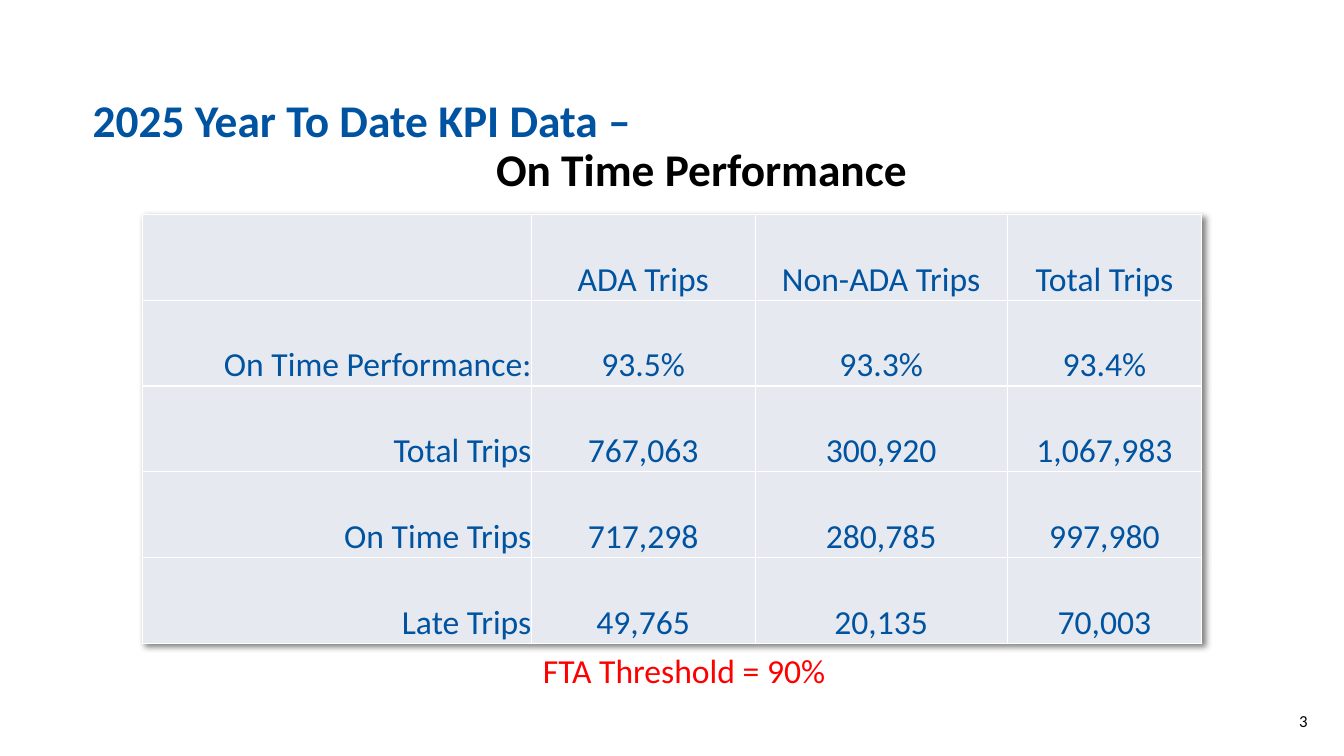
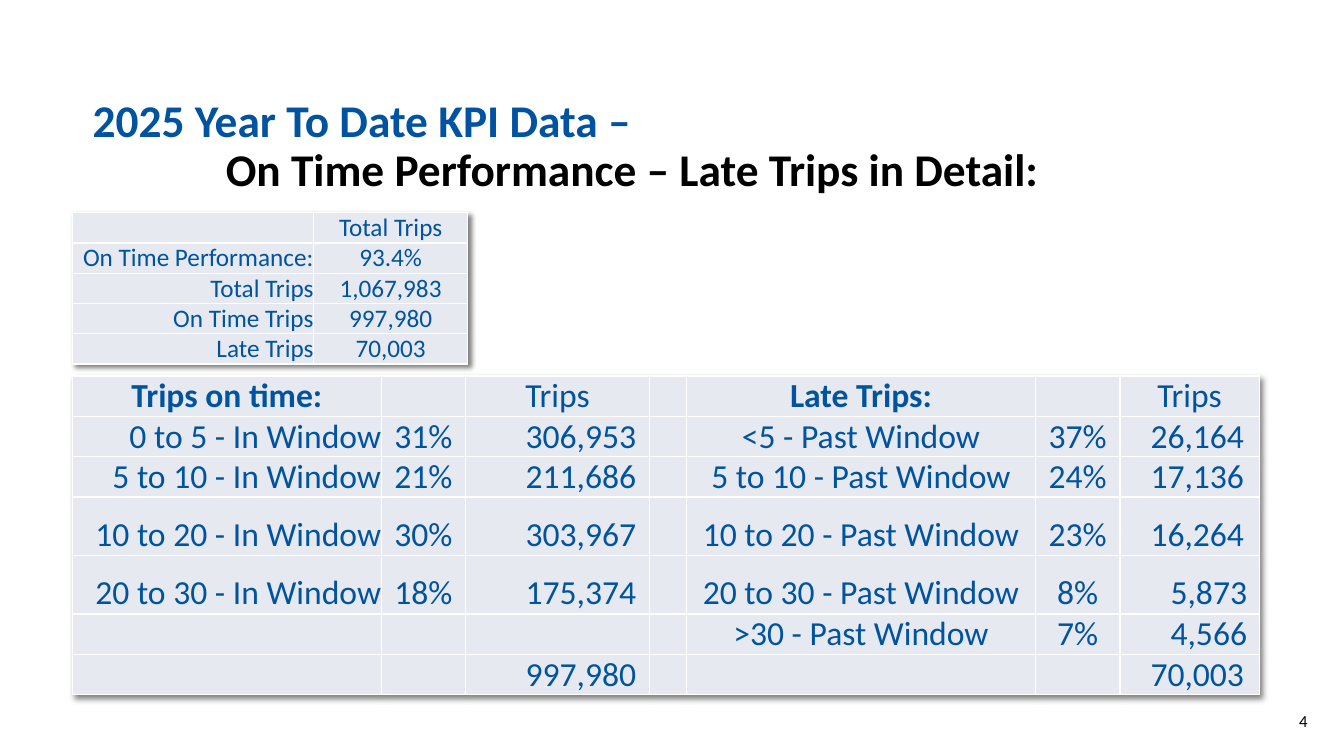
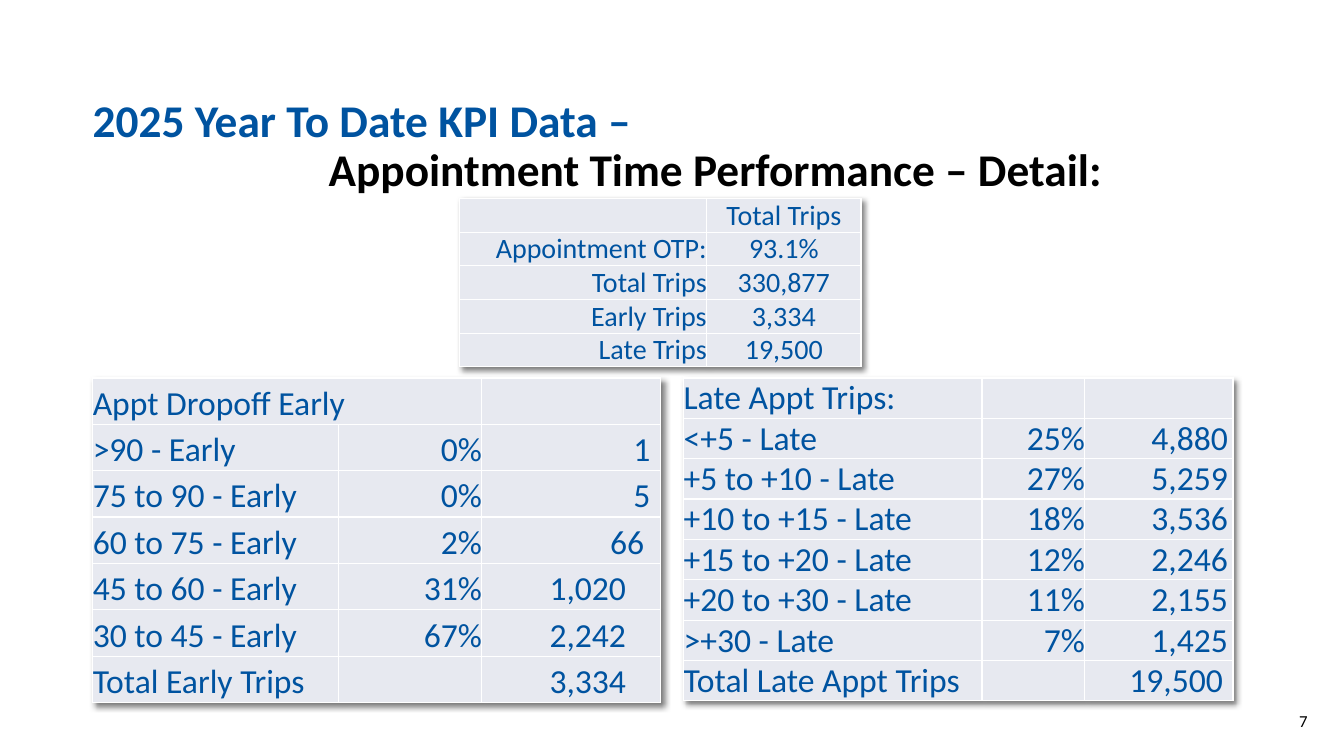
import pptx
import pptx.util
import pptx.dml.color
import pptx.enum.text
import pptx.oxml
import pptx.oxml.ns

Inches = pptx.util.Inches
Pt = pptx.util.Pt
RGBColor = pptx.dml.color.RGBColor
ANCHOR = pptx.enum.text.MSO_ANCHOR
ALIGN = dict(zip("lcr", (pptx.enum.text.PP_ALIGN.LEFT,
                         pptx.enum.text.PP_ALIGN.CENTER,
                         pptx.enum.text.PP_ALIGN.RIGHT)))

# Shared look
BLUE = RGBColor(0x00, 0x53, 0xA0)
BLACK = RGBColor(0x00, 0x00, 0x00)
RED = RGBColor(0xFF, 0x00, 0x00)
WHITE = RGBColor(0xFF, 0xFF, 0xFF)
PALE = RGBColor(0xE7, 0xE9, 0xF0)
FONT = "Calibri"
TITLE = "2025 Year To Date KPI Data –"
NS = pptx.oxml.ns.nsdecls("a")
EDGE = ('<a:{} ' + NS + ' w="12700"><a:solidFill><a:srgbClr val="' + str(WHITE)
        + '"/></a:solidFill></a:{}>')
SHADOW = ('<a:effectLst ' + NS + '><a:outerShdw blurRad="50800" dist="38100" '
          'dir="2700000" algn="tl" rotWithShape="0"><a:srgbClr val="000000">'
          '<a:alpha val="50000"/></a:srgbClr></a:outerShdw></a:effectLst>')

# Content: a cell is its text, or (text, right inset)
# "align" has one letter per column, "head" is the alignment of the top row
SLIDES = [
    dict(number="3", topic="On Time Performance", indent=4.0,
         note="FTA Threshold = 90%",
         tables=[
             dict(at=(1.41, 2.13), cols=[3.86, 2.22, 2.5, 1.93], rows=[0.85] * 5,
                  size=24, align="rccc", head="c", cells=[
                      ["", "ADA Trips", "Non-ADA Trips", "Total Trips"],
                      ["On Time Performance:", "93.5%", "93.3%", "93.4%"],
                      ["Total Trips", "767,063", "300,920", "1,067,983"],
                      ["On Time Trips", "717,298", "280,785", "997,980"],
                      ["Late Trips", "49,765", "20,135", "70,003"]])]),
    dict(number="4", topic="On Time Performance – Late Trips in Detail:", indent=1.32,
         tables=[
             dict(at=(0.72, 2.11), cols=[2.39, 1.53], rows=[0.3] * 5,
                  size=18, align="rc", head="c", cells=[
                      ["", "Total Trips"],
                      ["On Time Performance:", "93.4%"],
                      ["Total Trips", "1,067,983"],
                      ["On Time Trips", "997,980"],
                      ["Late Trips", "70,003"]]),
             dict(at=(0.72, 3.73), cols=[3.06, 0.84, 1.82, 0.37, 3.46, 0.84, 1.38],
                  rows=[0.4, 0.4, 0.4, 0.58, 0.58, 0.4, 0.4],
                  size=24, align="rcrcccr", head="c", bold=(0, 4),
                  inset={2: 0.13, 6: 0.15}, cells=[
                      ["Trips on time:", "", "Trips", "", "Late Trips:", "", "Trips"],
                      ["0 to 5 - In Window", "31%", "306,953", "",
                       "<5 - Past Window", "37%", "26,164"],
                      ["5 to 10 - In Window", "21%", "211,686", "",
                       "5 to 10 - Past Window", "24%", "17,136"],
                      ["10 to 20 - In Window", "30%", "303,967", "",
                       "10 to 20 - Past Window", "23%", "16,264"],
                      ["20 to 30 - In Window", "18%", "175,374", "",
                       "20 to 30 - Past Window", "8%", ("5,873", 0.12)],
                      ["", "", "", "", ">30 - Past Window", "7%", ("4,566", 0.12)],
                      ["", "", "997,980", "", "", "", "70,003"]])]),
    dict(number="7", topic="Appointment Time Performance – Detail:", indent=2.34,
         tables=[
             dict(at=(4.56, 1.97), cols=[2.45, 1.53], rows=[0.33] * 5,
                  size=20, align="rc", head="c", cells=[
                      ["", "Total Trips"],
                      ["Appointment OTP:", "93.1%"],
                      ["Total Trips", "330,877"],
                      ["Early Trips", "3,334"],
                      ["Late Trips", "19,500"]]),
             dict(at=(0.92, 3.75), cols=[2.44, 1.42, 1.77], rows=[0.46] * 7,
                  size=24, align="lrr", head="l", inset={2: 0.34}, merge=2, cells=[
                      ["Appt Dropoff Early", "", ""],
                      [">90 - Early", "0%", ("1", 0.1)],
                      ["75 to 90 - Early", "0%", ("5", 0.1)],
                      ["60 to 75 - Early", "2%", ("66", 0.16)],
                      ["45 to 60 - Early", "31%", "1,020"],
                      ["30 to 45 - Early", "67%", "2,242"],
                      ["Total Early Trips", "", "3,334"]]),
             dict(at=(6.78, 3.75), cols=[2.96, 1.02, 1.47], rows=[0.4] * 8,
                  size=24, align="lrr", head="l", inset={2: 0.05}, cells=[
                      ["Late Appt Trips:", "", ""],
                      ["<+5 - Late", "25%", "4,880"],
                      ["+5 to +10 - Late", "27%", "5,259"],
                      ["+10 to +15 - Late", "18%", "3,536"],
                      ["+15 to +20 - Late", "12%", "2,246"],
                      ["+20 to +30 - Late", "11%", "2,155"],
                      [">+30 - Late", "7%", "1,425"],
                      ["Total Late Appt Trips", "", ("19,500", 0.1)]])]),
]


def write(par, text, size=24, color=BLUE, bold=False, align="l", indent=0, line=None):
    """Put formatted text in a paragraph."""
    par.alignment = ALIGN[align]
    if line:
        par.line_spacing = line
    if indent:
        par._p.get_or_add_pPr().set("marL", str(Inches(indent)))
    run = par.add_run()
    run.text = text
    run.font.name, run.font.size, run.font.bold = FONT, Pt(size), bold
    run.font.color.rgb = color


def add_box(slide, at, anchor=ANCHOR.TOP, inset=(0.1, 0.05, 0.1, 0.05)):
    frame = slide.shapes.add_textbox(*map(Inches, at)).text_frame
    frame.word_wrap = True
    frame.vertical_anchor = anchor
    (frame.margin_left, frame.margin_top,
     frame.margin_right, frame.margin_bottom) = map(Inches, inset)
    return frame


def style_cell(cell, inset):
    cell.margin_left = cell.margin_top = cell.margin_bottom = 0
    cell.margin_right = Inches(inset)
    cell.vertical_anchor = ANCHOR.BOTTOM
    cell.fill.solid()
    cell.fill.fore_color.rgb = PALE
    props = cell._tc.get_or_add_tcPr()
    for place, tag in enumerate(("lnL", "lnR", "lnT", "lnB")):
        props.insert(place, pptx.oxml.parse_xml(EDGE.format(tag, tag)))


def add_grid(slide, data):
    cols, rows = data["cols"], data["rows"]
    area = (*data["at"], sum(cols), sum(rows))
    table = slide.shapes.add_table(len(rows), len(cols), *map(Inches, area)).table
    table.first_row = table.horz_banding = False
    table._tbl.tblPr.insert(0, pptx.oxml.parse_xml(SHADOW))
    for col, width in zip(table.columns, cols):
        col.width = Inches(width)
    for row, height in zip(table.rows, rows):
        row.height = Inches(height)
    for y, line in enumerate(data["cells"]):
        for x, entry in enumerate(line):
            inset = data.get("inset", {}).get(x, 0) if y else 0
            text, inset = entry if isinstance(entry, tuple) else (entry, inset)
            cell = table.cell(y, x)
            style_cell(cell, inset)
            if text:
                write(cell.text_frame.paragraphs[0], text, size=data["size"],
                      bold=y == 0 and x in data.get("bold", ()),
                      align=data["align"][x] if y else data["head"])
    if "merge" in data:
        table.cell(0, 0).merge(table.cell(0, data["merge"] - 1))


def add_frame(slide, data):
    """Title in two lines and the slide number."""
    title = add_box(slide, (0.92, 0.67, 11.57, 1.33), ANCHOR.BOTTOM, (0, 0.4, 0, 0.05))
    write(title.paragraphs[0], TITLE, size=32.4, bold=True, line=0.9)
    write(title.add_paragraph(), data["topic"], size=32.4, color=BLACK, bold=True,
          indent=data["indent"], line=0.9)
    number = add_box(slide, (11.37, 6.95, 1.6, 0.4), ANCHOR.MIDDLE, (0.1, 0.05, 0, 0.05))
    write(number.paragraphs[0], data["number"], size=12, color=BLACK, align="r")


def main():
    deck = pptx.Presentation()
    deck.slide_width, deck.slide_height = Inches(13.33), Inches(7.5)
    for data in SLIDES:
        slide = deck.slides.add_slide(deck.slide_layouts[6])
        add_frame(slide, data)
        for table in data["tables"]:
            add_grid(slide, table)
        if "note" in data:
            note = add_box(slide, (2.12, 6.4, 9.33, 0.5))
            write(note.paragraphs[0], data["note"], color=RED, align="c")
    deck.save("out.pptx")


if __name__ == "__main__":
    main()
